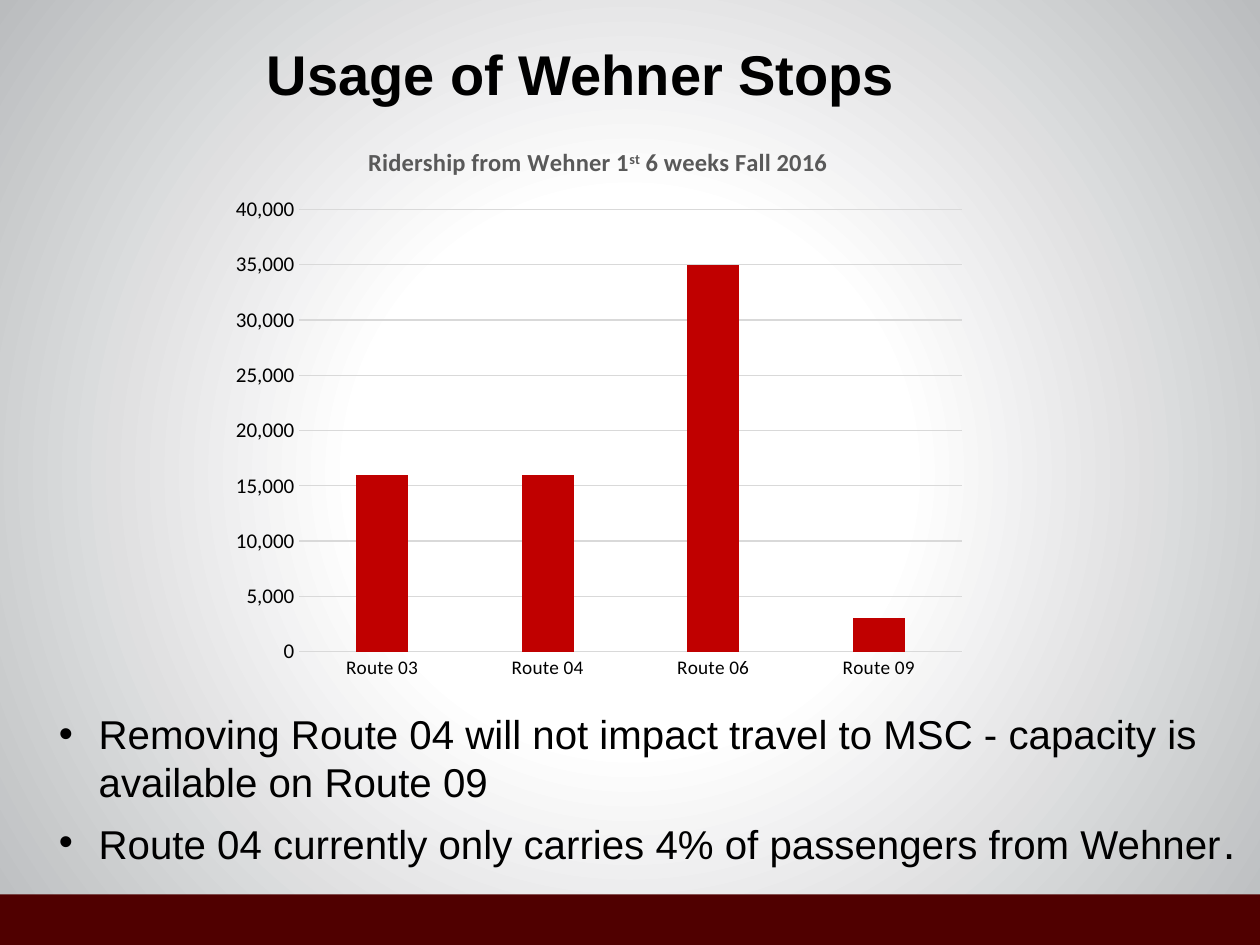
from lxml.etree import SubElement
from pptx import Presentation
from pptx.chart.data import CategoryChartData
from pptx.dml.color import RGBColor
from pptx.enum.chart import XL_CHART_TYPE, XL_TICK_MARK
from pptx.enum.shapes import MSO_SHAPE
from pptx.enum.text import MSO_ANCHOR, PP_ALIGN
from pptx.oxml import parse_xml
from pptx.oxml.ns import nsdecls, qn
from pptx.util import Cm, Pt

COLORS = {
    "text": "000000",
    "chart_title": "595959",
    "grid": "D9D9D9",
    "column": "C00000",
    "footer": "500000",
    "center": "FFFFFF",
    "edge": "BABCBE",
}
RIDERSHIP = {"Route 03": 16000, "Route 04": 16000, "Route 06": 35000, "Route 09": 3000}
BULLETS = [
    [("Removing Route 04 will not impact travel to MSC - capacity is available on Route 09", 23)],
    [("Route 04 currently only carries 4% of passengers from Wehner", 23), (".", 26)],
]


def rgb(name):
    return RGBColor.from_string(COLORS[name])


def format_font(font, size, color="text", name="Arial", bold=False):
    font.size, font.name, font.bold = Pt(size), name, bold
    font.color.rgb = rgb(color)


def add_text(p, text, superscript=False, **style):
    r = p.add_run()
    r.text = text
    format_font(r.font, **style)
    if superscript:
        r.font._element.set("baseline", "30000")


def set_background(slide):
    """Radial gradient that stays white near the middle."""
    stops = [(0, "center"), (35, "center"), (100, "edge")]
    gs = "".join(
        f'<a:gs pos="{pos * 1000}"><a:srgbClr val="{COLORS[c]}"/></a:gs>' for pos, c in stops
    )
    slide.background.fill.solid()
    bg_pr = slide.background._cSld.find(qn("p:bg")).find(qn("p:bgPr"))
    bg_pr.replace(bg_pr[0], parse_xml(
        f'<a:gradFill {nsdecls("a")} rotWithShape="1"><a:gsLst>{gs}</a:gsLst>'
        '<a:path path="circle"><a:fillToRect l="50000" t="50000" r="50000" b="50000"/>'
        "</a:path></a:gradFill>"
    ))


def add_footer(slide, x, y, w, h):
    sp = slide.shapes.add_shape(MSO_SHAPE.RECTANGLE, x, y, w, h)
    sp.shadow.inherit = False
    sp.fill.solid()
    sp.fill.fore_color.rgb = rgb("footer")
    sp.line.fill.background()


def place_title(slide, x, y, w, h):
    sp = slide.shapes.title
    sp.left, sp.top, sp.width, sp.height = x, y, w, h
    tf = sp.text_frame
    tf.vertical_anchor = MSO_ANCHOR.BOTTOM
    p = tf.paragraphs[0]
    p.alignment = PP_ALIGN.CENTER
    add_text(p, "Usage of Wehner Stops", size=32, bold=True)


def set_layout(element, **values):
    """Place a chart part by fractions of the chart's size."""
    for old in element.findall(qn("c:layout")):
        element.remove(old)
    layout = parse_xml(f'<c:layout {nsdecls("c")}><c:manualLayout/></c:layout>')
    for key, value in values.items():
        SubElement(layout[0], qn(f"c:{key}")).set("val", str(value))
    return layout


def format_axis(axis, size):
    axis.major_tick_mark = axis.minor_tick_mark = XL_TICK_MARK.NONE
    format_font(axis.tick_labels.font, size, name="Calibri")


def add_ridership_chart(slide, x, y, w, h):
    data = CategoryChartData(number_format="#,##0")
    data.categories = list(RIDERSHIP)
    data.add_series("Series 1", list(RIDERSHIP.values()))
    chart = slide.shapes.add_chart(XL_CHART_TYPE.COLUMN_CLUSTERED, x, y, w, h, data).chart
    format_font(chart.font, 10, name="Calibri")
    chart.has_legend = False

    p = chart.chart_title.text_frame.paragraphs[0]
    style = dict(size=14, color="chart_title", name="Calibri", bold=True)
    add_text(p, "Ridership from Wehner 1", **style)
    add_text(p, "st", superscript=True, **style)
    add_text(p, " 6 weeks Fall 2016", **style)
    chart.chart_title.include_in_layout = False
    title = chart.chart_title._element
    title.find(qn("c:tx")).addnext(set_layout(title, xMode="edge", yMode="edge", x=0.19, y=0.03))

    plot = chart.plots[0]
    plot.gap_width, plot.overlap, plot.vary_by_categories = 219, -27, False
    fill = plot.series[0].format.fill
    fill.solid()
    fill.fore_color.rgb = rgb("column")
    area = plot._element.getparent()
    area.insert(0, set_layout(area, layoutTarget="inner", xMode="edge", yMode="edge",
                              x=0.104, y=0.15, w=0.876, h=0.78))

    format_axis(chart.category_axis, 11)
    format_axis(chart.value_axis, 12)
    value_axis = chart.value_axis
    value_axis.minimum_scale, value_axis.maximum_scale = 0, 40000
    value_axis.major_unit = 5000
    value_axis.tick_labels.number_format = "#,##0"
    value_axis.tick_labels.number_format_is_linked = False
    value_axis.format.line.fill.background()
    for line in (chart.category_axis.format.line, value_axis.major_gridlines.format.line):
        line.color.rgb = rgb("grid")
        line.width = Pt(0.75)


def add_bullets(slide, x, y, w, h):
    tf = slide.shapes.add_textbox(x, y, w, h).text_frame
    tf.word_wrap = True
    for i, runs in enumerate(BULLETS):
        p = tf.add_paragraph() if i else tf.paragraphs[0]
        p.space_before = Pt(5 if i else 0)
        p_pr = p._p.get_or_add_pPr()
        p_pr.set("marL", str(Cm(0.8)))
        p_pr.set("indent", str(-Cm(0.8)))
        SubElement(p_pr, qn("a:buFont")).set("typeface", "Arial")
        SubElement(p_pr, qn("a:buChar")).set("char", "•")
        for text, size in runs:
            add_text(p, text, size=size)


def main():
    prs = Presentation()
    prs.slide_width, prs.slide_height = Cm(25.4), Cm(19.05)
    slide = prs.slides.add_slide(prs.slide_layouts[5])
    set_background(slide)
    footer_top = Cm(18.03)
    add_footer(slide, 0, footer_top, prs.slide_width, prs.slide_height - footer_top)
    place_title(slide, Cm(4.09), Cm(0.53), Cm(15.24), Cm(1.75))
    add_bullets(slide, Cm(0.94), Cm(14.17), Cm(24.33), Cm(3.66))
    add_ridership_chart(slide, Cm(4.45), Cm(2.51), Cm(15.24), Cm(11.43))
    prs.save("out.pptx")


if __name__ == "__main__":
    main()
